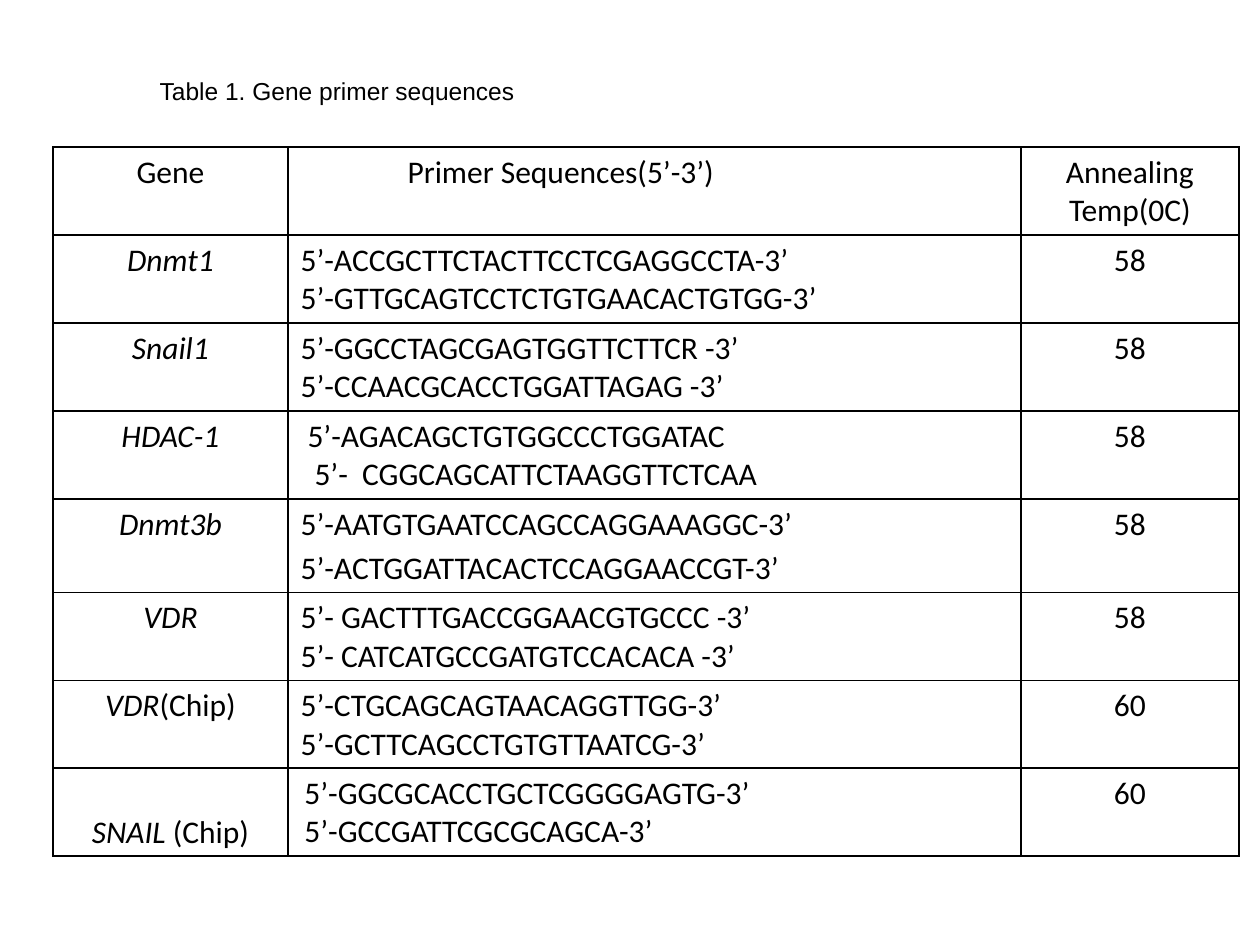
import pptx
import pptx.dml.color
import pptx.enum.text
import pptx.oxml
import pptx.oxml.ns
import pptx.util

EMU_PER_PX = 914400 / 126
COLORS = {"ink": "000000"}
CAPTION_FORMAT = {"name": "Arial", "size": pptx.util.Pt(14), "bold": False}
BODY_FORMAT = {"name": "Calibri", "size": pptx.util.Pt(18), "bold": False}
CENTER = pptx.enum.text.PP_ALIGN.CENTER
LEFT = pptx.enum.text.PP_ALIGN.LEFT

COLUMN_WIDTHS = [235, 733, 218]
ROW_HEIGHT = 88
CELL_BOTTOM_MARGIN = 4
HEADER_INDENT = 107
HEADERS = ["Gene", "Primer Sequences(5’-3’)", "Annealing Temp(0C)"]
GENES = [
    ("Dnmt1", "", ["5’-ACCGCTTCTACTTCCTCGAGGCCTA-3’", "5’-GTTGCAGTCCTCTGTGAACACTGTGG-3’"], "58"),
    ("Snail1", "", ["5’-GGCCTAGCGAGTGGTTCTTCR -3’", "5’-CCAACGCACCTGGATTAGAG -3’"], "58"),
    ("HDAC-1", "", ["5’-AGACAGCTGTGGCCCTGGATAC", "5’-  CGGCAGCATTCTAAGGTTCTCAA"], "58"),
    ("Dnmt3b", "", ["5’-AATGTGAATCCAGCCAGGAAAGGC-3’", "5’-ACTGGATTACACTCCAGGAACCGT-3’"], "58"),
    ("VDR", "", ["5’- GACTTTGACCGGAACGTGCCC -3’", "5’- CATCATGCCGATGTCCACACA -3’"], "58"),
    ("VDR", "(Chip)", ["5’-CTGCAGCAGTAACAGGTTGG-3’", "5’-GCTTCAGCCTGTGTTAATCG-3’"], "60"),
    ("SNAIL", " (Chip)", [], "60"),
]
SNAIL_PRIMERS = ["5’-GGCGCACCTGCTCGGGGAGTG-3’", "5’-GCCGATTCGCGCAGCA-3’"]
PRIMER_INDENTS = {"HDAC-1": [7, 14]}
PRIMER_SPACING = {"Dnmt3b": 3.6}


def px(length):
    return pptx.util.Emu(round(length * EMU_PER_PX))


def add_run(paragraph, text, text_format, italic=False):
    run = paragraph.add_run()
    run.text = text
    for name, value in {**text_format, "italic": italic}.items():
        setattr(run.font, name, value)
    run.font.color.rgb = pptx.dml.color.RGBColor.from_string(COLORS["ink"])


def write_lines(text_frame, lines, alignment=LEFT, indents=(0, 0), spacing=0):
    for index, line in enumerate(lines):
        paragraph = text_frame.paragraphs[0] if index == 0 else text_frame.add_paragraph()
        paragraph.alignment = alignment
        paragraph.space_before = pptx.util.Pt(spacing)
        if indents[index]:
            paragraph._p.get_or_add_pPr().set("marL", str(px(indents[index])))
        add_run(paragraph, line, BODY_FORMAT)


def add_borders(cell):
    properties = cell._tc.get_or_add_tcPr()
    for position, side in enumerate(("lnL", "lnR", "lnT", "lnB")):
        properties.insert(position, pptx.oxml.parse_xml(
            f'<a:{side} {pptx.oxml.ns.nsdecls("a")} w="12700"><a:solidFill>'
            f'<a:srgbClr val="{COLORS["ink"]}"/></a:solidFill></a:{side}>'))


def add_caption(slide, left, top, width, height):
    title = slide.shapes.title
    box = {"left": left, "top": top, "width": width, "height": height}
    for name, value in box.items():
        setattr(title, name, px(value))
    title.text_frame.vertical_anchor = pptx.enum.text.MSO_ANCHOR.MIDDLE
    paragraph = title.text_frame.paragraphs[0]
    paragraph.alignment = LEFT
    add_run(paragraph, "Table 1. Gene primer sequences", CAPTION_FORMAT)


def add_primer_table(slide, left, top):
    row_count = len(GENES) + 1
    table = slide.shapes.add_table(
        row_count, len(COLUMN_WIDTHS), px(left), px(top),
        px(sum(COLUMN_WIDTHS)), px(ROW_HEIGHT * row_count)).table
    table.first_row = table.horz_banding = False
    for column, width in zip(table.columns, COLUMN_WIDTHS):
        column.width = px(width)
    for row in table.rows:
        row.height = px(ROW_HEIGHT)
    for cell in table.iter_cells():
        cell.fill.background()
        cell.margin_bottom = px(CELL_BOTTOM_MARGIN)
        add_borders(cell)

    for column, header in enumerate(HEADERS):
        is_primer = column == 1
        write_lines(table.cell(0, column).text_frame, [header],
                    LEFT if is_primer else CENTER,
                    [HEADER_INDENT if is_primer else 0])

    for row, (gene, suffix, primers, temperature) in enumerate(GENES, 1):
        paragraph = table.cell(row, 0).text_frame.paragraphs[0]
        paragraph.alignment = CENTER
        add_run(paragraph, gene, BODY_FORMAT, italic=True)
        if suffix:
            add_run(paragraph, suffix, BODY_FORMAT)
        write_lines(table.cell(row, 1).text_frame, primers,
                    indents=PRIMER_INDENTS.get(gene, (0, 0)),
                    spacing=PRIMER_SPACING.get(gene, 0))
        write_lines(table.cell(row, 2).text_frame, [temperature], CENTER)
    table.cell(len(GENES), 0).vertical_anchor = pptx.enum.text.MSO_ANCHOR.BOTTOM


def add_snail_primers(slide, left, top, width, height):
    text_box = slide.shapes.add_textbox(px(left), px(top), px(width), px(height))
    text_box.text_frame.word_wrap = False
    write_lines(text_box.text_frame, SNAIL_PRIMERS)


def main():
    presentation = pptx.Presentation()
    presentation.slide_width = px(1260)
    presentation.slide_height = px(945)
    slide = presentation.slides.add_slide(presentation.slide_layouts.get_by_name("Title Only"))
    add_caption(slide, 147, 55, 693, 72)
    add_primer_table(slide, 53, 147)
    add_snail_primers(slide, 292, 767, 504, 89)
    presentation.save("out.pptx")


if __name__ == "__main__":
    main()
